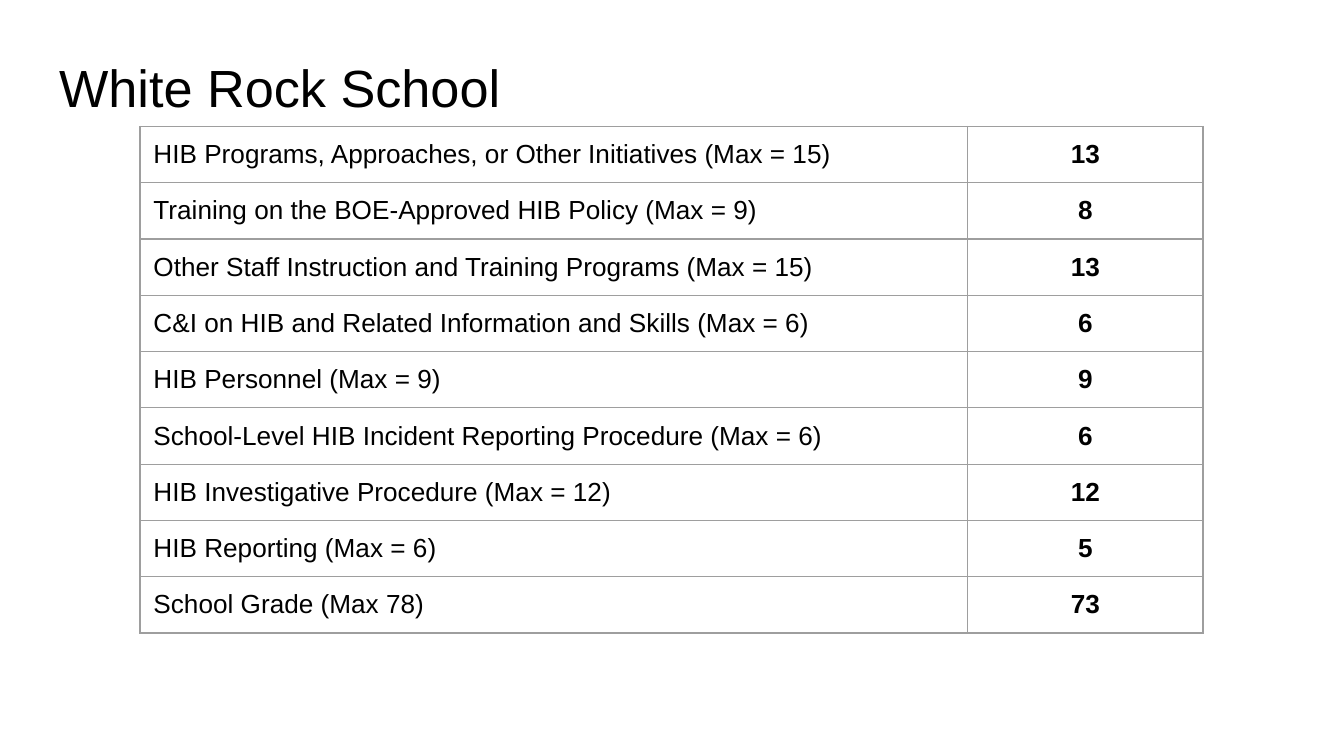
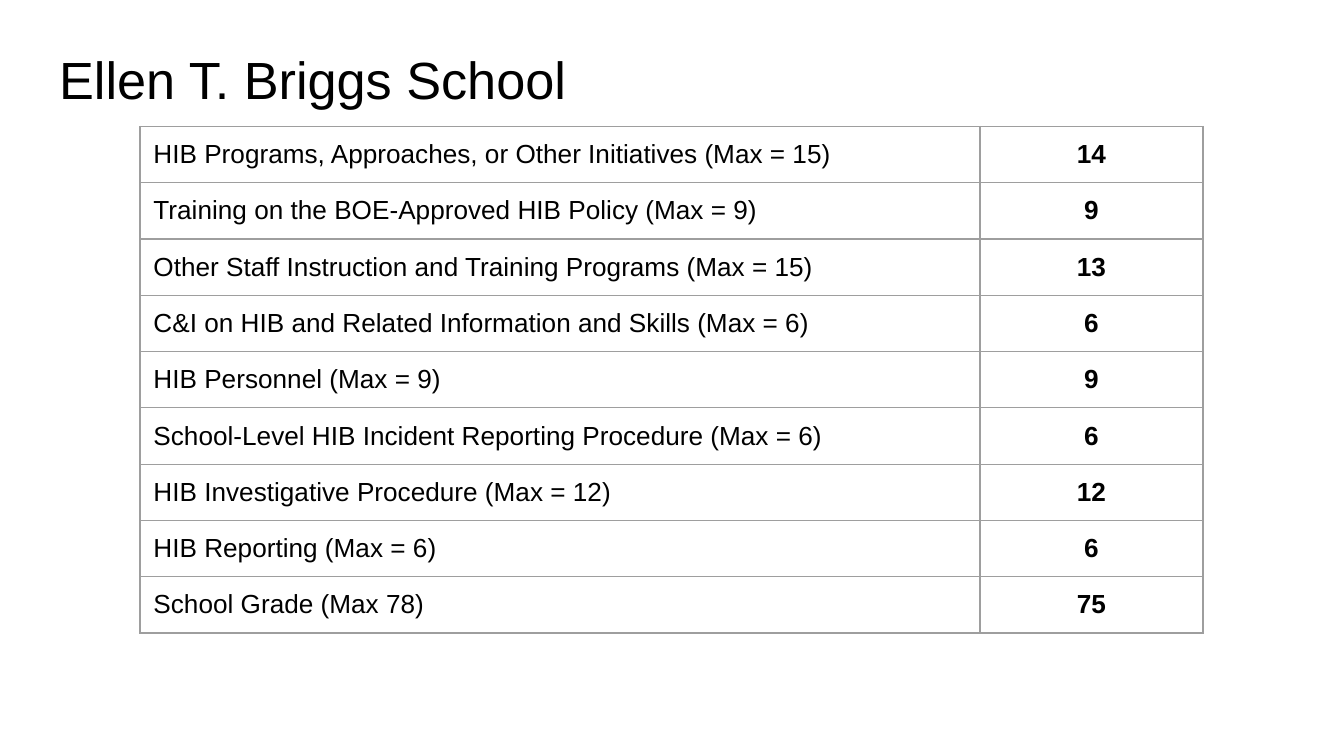
from lxml import etree
from pptx import Presentation
from pptx.dml.color import RGBColor
from pptx.enum import text
from pptx.oxml import ns
from pptx.util import Pt

BLACK = RGBColor(0x00, 0x00, 0x00)
GREY = RGBColor(0x9E, 0x9E, 0x9E)
FONT = "Arial"
INSET = Pt(7.2)

CRITERIA = [
    "HIB Programs, Approaches, or Other Initiatives (Max = 15)",
    "Training on the BOE-Approved HIB Policy (Max = 9)",
    "Other Staff Instruction and Training Programs (Max = 15)",
    "C&I on HIB and Related Information and Skills (Max = 6)",
    "HIB Personnel (Max = 9)",
    "School-Level HIB Incident Reporting Procedure (Max = 6)",
    "HIB Investigative Procedure (Max = 12)",
    "HIB Reporting (Max = 6)",
    "School Grade (Max 78)",
]


def write(tf, content, size=14, bold=False, color=BLACK, align=text.PP_ALIGN.LEFT):
    p = tf.paragraphs[0]
    p.alignment = align
    r = p.add_run()
    r.text = content
    r.font.name = FONT
    r.font.size = Pt(size)
    r.font.bold = bold
    r.font.color.rgb = color


class Deck:
    def __init__(self):
        self.prs = Presentation()
        self.prs.slide_width, self.prs.slide_height = Pt(720), Pt(405)
        self.s = None

    def slide(self):
        self.s = self.prs.slides.add_slide(self.prs.slide_layouts[5])

    def title(self, content, top, height):
        sp = self.s.shapes.title
        sp.left, sp.top, sp.width, sp.height = Pt(24.5), Pt(top), Pt(671), Pt(height)
        tf = sp.text_frame
        tf.word_wrap = True
        tf.auto_size = text.MSO_AUTO_SIZE.NONE
        tf.vertical_anchor = text.MSO_ANCHOR.TOP
        tf.margin_left = tf.margin_right = tf.margin_top = tf.margin_bottom = INSET
        write(tf, content, size=28)

    def border(self, cell):
        tcPr = cell._tc.get_or_add_tcPr()
        for side in "LRTB":
            ln = etree.SubElement(tcPr, ns.qn(f"a:ln{side}"), w=str(Pt(0.75)))
            fill = etree.SubElement(ln, ns.qn("a:solidFill"))
            etree.SubElement(fill, ns.qn("a:srgbClr"), val=str(GREY))

    def cell(self, cell, content, **fmt):
        cell.margin_left = cell.margin_right = INSET
        cell.margin_top = cell.margin_bottom = INSET
        self.border(cell)
        cell.fill.background()
        write(cell.text_frame, content, **fmt)

    def score_table(self, scores, widths, row_height=30):
        rows = len(CRITERIA)
        tbl = self.s.shapes.add_table(rows, 2, Pt(75), Pt(67.7), Pt(sum(widths)),
                                      Pt(rows * row_height)).table
        tbl.first_row = tbl.horz_banding = False
        for col, width in zip(tbl.columns, widths):
            col.width = Pt(width)
        for i, (criterion, score) in enumerate(zip(CRITERIA, scores)):
            tbl.rows[i].height = Pt(row_height)
            self.cell(tbl.cell(i, 0), criterion)
            self.cell(tbl.cell(i, 1), str(score), bold=True, align=text.PP_ALIGN.CENTER)


def main():
    deck = Deck()

    deck.slide()
    deck.title("White Rock School", top=22.3, height=41.8)
    deck.score_table([13, 8, 13, 6, 9, 6, 12, 5, 73], widths=(443.5, 126))

    deck.slide()
    deck.title("Ellen T. Briggs School", top=18, height=49.7)
    deck.score_table([14, 9, 13, 6, 9, 6, 12, 6, 75], widths=(450, 119.5))

    deck.prs.save("out.pptx")


if __name__ == "__main__":
    main()
